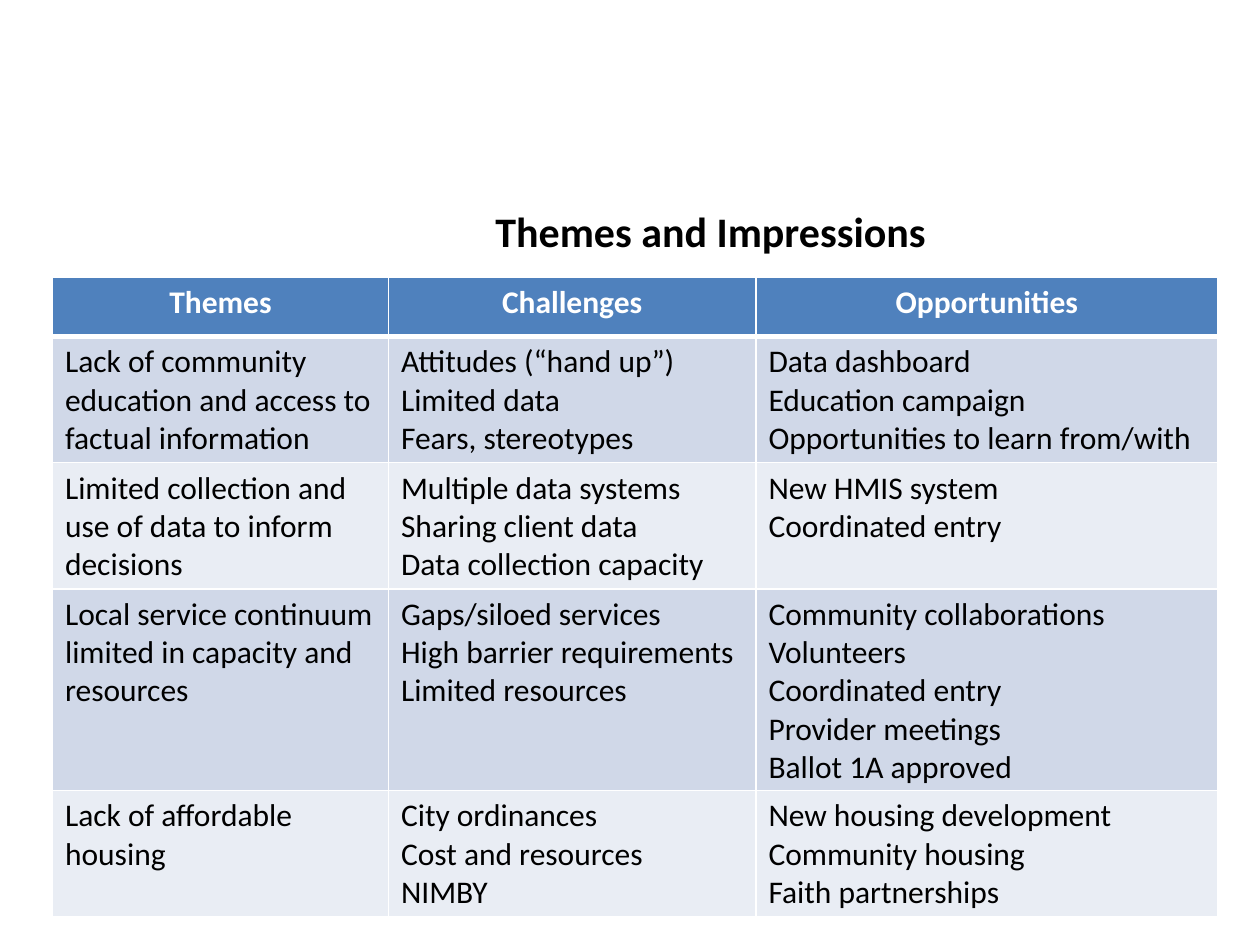
from dataclasses import dataclass

from lxml.etree import SubElement
from pptx import Presentation
from pptx.dml.color import RGBColor
from pptx.enum.text import MSO_AUTO_SIZE, PP_ALIGN
from pptx.oxml.ns import qn
from pptx.slide import Slide
from pptx.table import _Cell
from pptx.text.text import TextFrame
from pptx.util import Pt

FONT_NAME = "Calibri"
BLACK = RGBColor(0x00, 0x00, 0x00)
WHITE = RGBColor(0xFF, 0xFF, 0xFF)
HEADER_BLUE = RGBColor(0x4F, 0x81, 0xBD)
BAND_COLORS = (RGBColor(0xD0, 0xD8, 0xE8), RGBColor(0xE9, 0xED, 0xF4))

COLUMN_WIDTHS = (192, 210, 264)
THIN_BORDER = 1
HEADER_BORDER = 3


@dataclass(frozen=True)
class TableRow:
    height: float
    cells: tuple[str, ...]


HEADER = TableRow(34, ("Themes", "Challenges", "Opportunities"))
THEMES = (
    TableRow(72, (
        "Lack of community education and access to factual information",
        "Attitudes (“hand up”)\nLimited data\nFears, stereotypes",
        "Data dashboard\nEducation campaign\nOpportunities to learn from/with",
    )),
    TableRow(72, (
        "Limited collection and use of data to inform decisions",
        "Multiple data systems\nSharing client data\nData collection capacity",
        "New HMIS system\nCoordinated entry",
    )),
    TableRow(115, (
        "Local service continuum limited in capacity and resources",
        "Gaps/siloed services\nHigh barrier requirements\nLimited resources",
        "Community collaborations\nVolunteers\nCoordinated entry\n"
        "Provider meetings\nBallot 1A approved",
    )),
    TableRow(72, (
        "Lack of affordable housing",
        "City ordinances\nCost and resources\nNIMBY",
        "New housing development\nCommunity housing\nFaith partnerships",
    )),
)


def write_text(text_frame: TextFrame, text: str, size: float, color: RGBColor,
               bold: bool, alignment: PP_ALIGN = PP_ALIGN.LEFT) -> None:
    text_frame.text = text
    for paragraph in text_frame.paragraphs:
        paragraph.alignment = alignment
        for run in paragraph.runs:
            run.font.name = FONT_NAME
            run.font.size = Pt(size)
            run.font.bold = bold
            run.font.color.rgb = color


def set_borders(cell: _Cell, top: float, bottom: float) -> None:
    """Draw white cell borders; they must precede the cell fill."""
    properties = cell._tc.get_or_add_tcPr()
    widths = {"a:lnL": THIN_BORDER, "a:lnR": THIN_BORDER, "a:lnT": top, "a:lnB": bottom}
    for tag, width in widths.items():
        line = SubElement(properties, qn(tag), w=str(Pt(width)))
        fill = SubElement(line, qn("a:solidFill"))
        SubElement(fill, qn("a:srgbClr"), val=str(WHITE))


def add_title(slide: Slide) -> None:
    title = slide.shapes.add_textbox(Pt(276), Pt(114), Pt(263), Pt(36))
    title.text_frame.word_wrap = False
    title.text_frame.auto_size = MSO_AUTO_SIZE.SHAPE_TO_FIT_TEXT
    write_text(title.text_frame, "Themes and Impressions", 24, BLACK, True)


def add_themes_table(slide: Slide) -> None:
    rows = (HEADER, *THEMES)
    table = slide.shapes.add_table(
        len(rows), len(COLUMN_WIDTHS), Pt(30), Pt(158.4),
        Pt(sum(COLUMN_WIDTHS)), Pt(sum(row.height for row in rows)),
    ).table
    for column, width in zip(table.columns, COLUMN_WIDTHS):
        column.width = Pt(width)

    for row_index, row in enumerate(rows):
        table.rows[row_index].height = Pt(row.height)
        is_header = row_index == 0
        top = HEADER_BORDER if row_index == 1 else THIN_BORDER
        bottom = HEADER_BORDER if is_header else THIN_BORDER
        for column_index, text in enumerate(row.cells):
            cell = table.cell(row_index, column_index)
            set_borders(cell, top, bottom)
            cell.fill.solid()
            if is_header:
                cell.fill.fore_color.rgb = HEADER_BLUE
                write_text(cell.text_frame, text, 18, WHITE, True, PP_ALIGN.CENTER)
            else:
                cell.fill.fore_color.rgb = BAND_COLORS[(row_index - 1) % 2]
                write_text(cell.text_frame, text, 18, BLACK, False)


def main() -> None:
    presentation = Presentation()
    presentation.slide_width = Pt(720)
    presentation.slide_height = Pt(540)
    slide = presentation.slides.add_slide(presentation.slide_layouts[6])

    # Title above the table
    add_title(slide)

    # Themes with their challenges and opportunities
    add_themes_table(slide)

    presentation.save("out.pptx")


if __name__ == "__main__":
    main()
